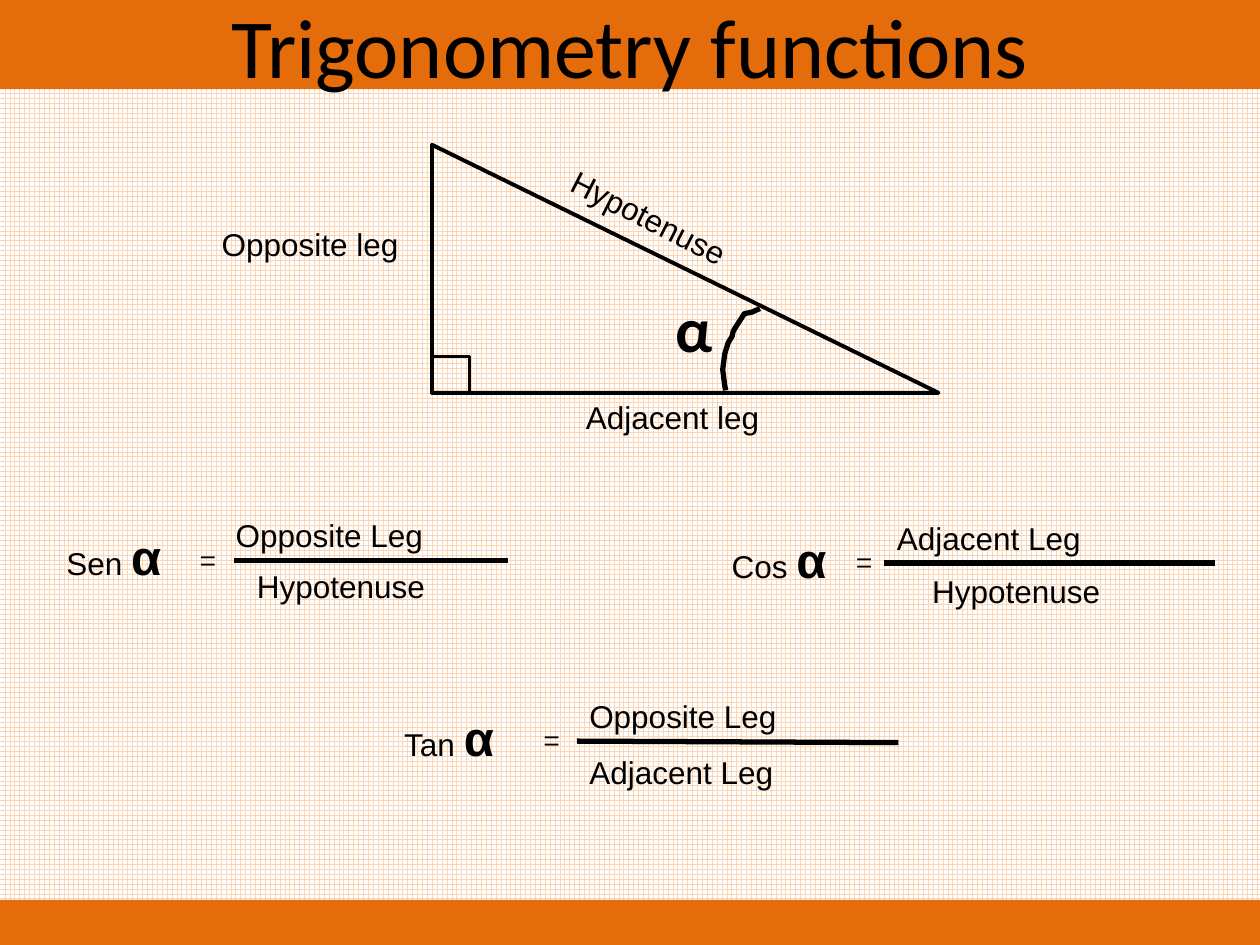
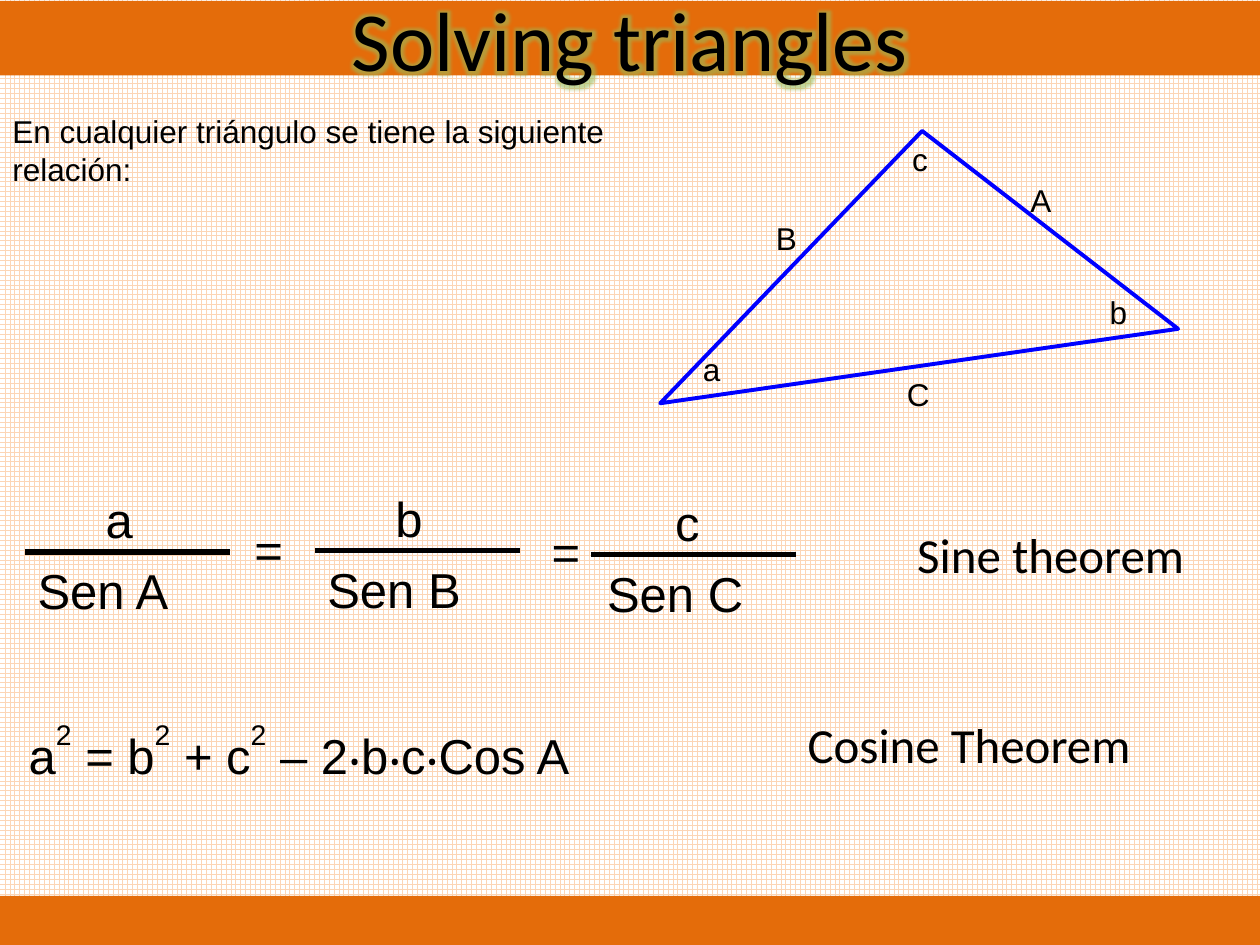
from dataclasses import dataclass

from lxml.etree import SubElement
from pptx import Presentation
from pptx.dml.color import RGBColor
from pptx.enum.dml import MSO_PATTERN
from pptx.enum.shapes import MSO_CONNECTOR, MSO_SHAPE
from pptx.enum.text import MSO_ANCHOR, MSO_AUTO_SIZE, PP_ALIGN
from pptx.oxml.ns import qn
from pptx.util import Cm, Pt


@dataclass(frozen=True)
class Theme:
    band: RGBColor = RGBColor(0xE4, 0x6C, 0x0A)
    grid: RGBColor = RGBColor(0xFC, 0xD5, 0xB5)
    paper: RGBColor = RGBColor(0xFF, 0xFF, 0xFF)
    ink: RGBColor = RGBColor(0, 0, 0)
    blue: RGBColor = RGBColor(0, 0, 0xFF)
    glow: str = "9BBB59"
    body_font: str = "Arial"
    head_font: str = "Calibri"
    sign_font: str = "Montserrat"
    title: int = 48
    angle: int = 36
    formula: int = 28
    label: int = 18
    thin: float = 2
    outline: float = 2.25
    bar: float = 3


class Deck:
    def __init__(self, theme):
        self.t = theme
        self.prs = Presentation()
        self.prs.slide_width, self.prs.slide_height = Cm(25.4), Cm(19.05)
        fill = self.prs.slide_master.background.fill
        fill.patterned()
        fill.pattern = MSO_PATTERN.LARGE_GRID
        fill.fore_color.rgb = theme.grid
        fill.back_color.rgb = theme.paper
        self.s = None

    def style(self, p, size, name=None, bold=False):
        p.font.size = Pt(size)
        p.font.name = name or self.t.body_font
        p.font.bold = bold
        p.font.color.rgb = self.t.ink

    def slide(self, title, top, height, footer_top, glow=False):
        self.s = self.prs.slides.add_slide(self.prs.slide_layouts[5])
        sp = self.s.shapes.title
        sp.left, sp.top, sp.width, sp.height = Cm(0), Cm(top), Cm(25.4), Cm(height)
        sp.fill.solid()
        sp.fill.fore_color.rgb = self.t.band
        tf = sp.text_frame
        tf.text = title
        tf.auto_size = MSO_AUTO_SIZE.NONE
        tf.vertical_anchor = MSO_ANCHOR.MIDDLE
        p = tf.paragraphs[0]
        p.alignment = PP_ALIGN.CENTER
        self.style(p, self.t.title, self.t.head_font)
        if glow:
            rPr = p.runs[0]._r.get_or_add_rPr()
            halo = SubElement(SubElement(rPr, qn("a:effectLst")), qn("a:glow"), rad="101600")
            clr = SubElement(halo, qn("a:srgbClr"), val=self.t.glow)
            SubElement(clr, qn("a:alpha"), val="60000")
        footer = self.s.shapes.add_shape(
            MSO_SHAPE.RECTANGLE, Cm(0), Cm(footer_top), Cm(25.4), Cm(19.05 - footer_top))
        footer.shadow.inherit = False
        footer.fill.solid()
        footer.fill.fore_color.rgb = self.t.band
        footer.line.fill.background()

    def text(self, text, x, y, w=5.5, h=1.02, size=None, name=None, bold=False,
             align=PP_ALIGN.LEFT, rotation=0):
        sp = self.s.shapes.add_textbox(Cm(x), Cm(y), Cm(w), Cm(h))
        sp.rotation = rotation
        tf = sp.text_frame
        tf.word_wrap = True
        p = tf.paragraphs[0]
        p.alignment = align
        p.add_run().text = text
        self.style(p, size or self.t.label, name, bold)
        return p

    def outline(self, sp, color, width):
        sp.shadow.inherit = False
        sp.fill.background()
        sp.line.color.rgb = color
        sp.line.width = Pt(width)

    def shape(self, kind, x, y, w, h, width):
        sp = self.s.shapes.add_shape(kind, Cm(x), Cm(y), Cm(w), Cm(h))
        self.outline(sp, self.t.ink, width)

    def freeform(self, points, color, width, close=False):
        start, *rest = [(Cm(x), Cm(y)) for x, y in points]
        builder = self.s.shapes.build_freeform(*start)
        builder.add_line_segments(rest, close=close)
        self.outline(builder.convert_to_shape(), color, width)

    def line(self, x1, y1, x2, y2):
        cxn = self.s.shapes.add_connector(
            MSO_CONNECTOR.STRAIGHT, Cm(x1), Cm(y1), Cm(x2), Cm(y2))
        cxn.line.color.rgb = self.t.ink
        cxn.line.width = Pt(self.t.bar)
        SubElement(cxn._element.spPr, qn("a:effectLst"))

    def fraction(self, top, top_x, bottom, bottom_x, x1, x2, y, rise, drop, size, tilt=0):
        self.text(top, top_x, y - rise, size=size)
        self.line(x1, y, x2, y + tilt)
        self.text(bottom, bottom_x, y + drop, size=size)

    def ratio(self, name, name_x, sign_x, y, *fraction, drop=0.05, tilt=0):
        p = self.text(f"{name} ", name_x, y - 0.81, 2.95, 1.45)
        r = p.add_run()
        r.text = "α"
        r.font.size = Pt(self.t.formula)
        r.font.bold = True
        self.text("=", sign_x, y - 0.52, 0.95, name=self.t.sign_font)
        self.fraction(*fraction, y, 1.02, drop, self.t.label, tilt)


def trigonometry_functions(d):
    t = d.t
    d.slide("Trigonometry functions", 0, 1.8, 18.14)
    d.shape(MSO_SHAPE.RIGHT_TRIANGLE, 8.71, 2.92, 10.21, 5, t.outline)
    d.shape(MSO_SHAPE.RECTANGLE, 8.71, 7.19, 0.76, 0.73, t.thin)
    angle_arc = [(15.32, 6.22), (15.14, 6.3), (15.01, 6.32), (14.86, 6.55),
                 (14.78, 6.68), (14.76, 6.78), (14.68, 6.91), (14.61, 7.14),
                 (14.57, 7.45), (14.61, 7.77), (14.63, 7.87)]
    d.freeform(angle_arc, t.ink, t.bar)
    d.text("α", 13.36, 5.72, 1.3, 1.8, t.angle, t.head_font, True)
    d.text("Hypotenuse", 11.05, 4.24, 5.49, rotation=26.9)
    d.text("Opposite leg", 4.22, 4.42, 4.47)
    d.text("Adjacent leg", 11.56, 7.9, 5.16)

    opposite, adjacent, hypotenuse = "Opposite Leg", "Adjacent Leg", "Hypotenuse"
    d.ratio("Sen", 1.09, 3.76, 11.3, opposite, 4.5, hypotenuse, 4.93, 4.72, 10.24, drop=0)
    d.ratio("Cos", 14.5, 16.99, 11.35, adjacent, 17.83, hypotenuse, 18.54, 17.83, 24.49)
    d.ratio("Tan", 7.9, 10.69, 14.94, opposite, 11.63, adjacent, 11.63, 11.63, 18.11,
            drop=0.12, tilt=0.03)


def solving_triangles(d):
    t = d.t
    d.slide("Solving triangles", 0.02, 1.5, 18.06, glow=True)
    d.freeform([(13.31, 8.13), (18.59, 2.64), (23.75, 6.63)], t.blue, t.outline, True)
    for name, x, y in [("a", 13.92, 6.93), ("b", 22.12, 5.79), ("c", 18.14, 2.69),
                       ("A", 20.52, 3.53), ("B", 15.39, 4.29), ("C", 18.03, 7.44)]:
        d.text(name, x, y, 1.1)
    d.text("En cualquier triángulo se tiene la siguiente relación:", 0, 2.13, 14.86, 1.8)

    for side, x, bar_x, y in [("a", 0.51, 0.51, 11.13), ("b", 6.35, 6.35, 11.1),
                              ("c", 11.99, 11.91, 11.18)]:
        d.fraction(side, x + 1.37, f"Sen {side.upper()}", x, bar_x, bar_x + 4.13, y,
                   1.38, 0.05, t.formula)
    for x, y in [(4.88, 10.34), (10.87, 10.39)]:
        d.text("=", x, y, 1.1, size=t.formula)
    d.text("Sine theorem", 16.99, 10.44, 8.38, 1.45, t.formula, t.head_font,
           align=PP_ALIGN.CENTER)

    p = d.text("a", 0.33, 14.33, 15.16, 1.45, t.formula)
    for term in [" = b", " + c", " – 2‧b‧c‧Cos A"]:
        square = p.add_run()
        square.text = "2"
        square._r.get_or_add_rPr().set("baseline", "60000")
        p.add_run().text = term
    d.text("Cosine Theorem", 16.03, 14.27, 9.37, 1.45, t.formula, t.head_font)


def main():
    d = Deck(Theme())
    trigonometry_functions(d)
    solving_triangles(d)
    d.prs.save("out.pptx")


if __name__ == "__main__":
    main()
